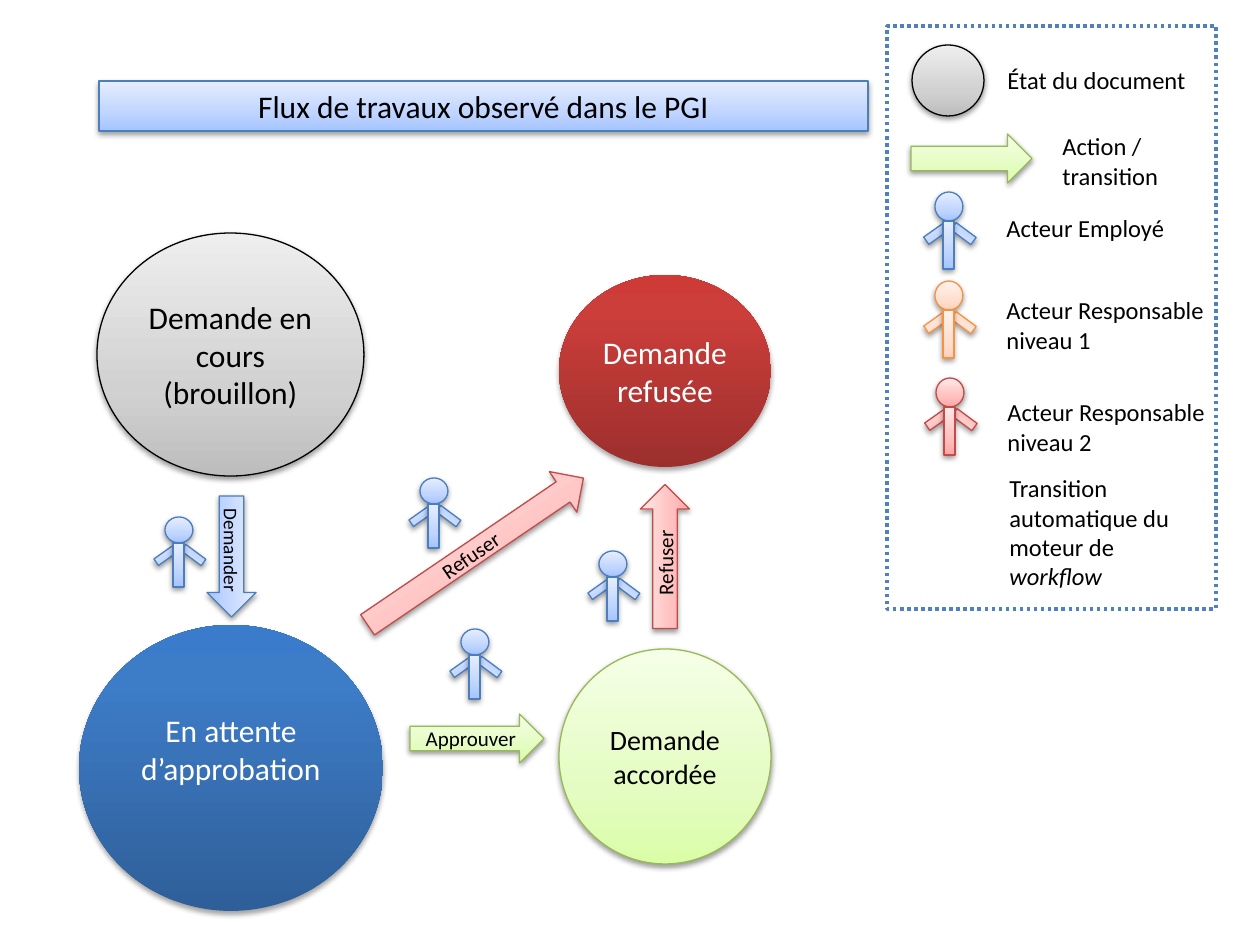
"""Build the slide showing the request approval workflow and its legend."""
from copy import deepcopy

from lxml import etree
from pptx import Presentation, util as u
from pptx.dml import color
from pptx.enum import dml, shapes, text
from pptx.oxml import ns

SCALE = 914400 / 126
KIND = shapes.MSO_SHAPE
ALIGN = text.PP_ALIGN
STOPS = (0, 0.35, 1)
DARK_STOPS = (0, 0.8, 1)
PALETTES = {
    "grey": (STOPS, ("BDBDBD", "D1D1D1", "EEEEEE"), "000000"),
    "blue": (STOPS, ("A4C4FF", "BFD4FF", "E6EEFF"), "4B7EBC"),
    "green": (STOPS, ("DAFDA7", "E4FCC2", "F5FFE7"), "98B955"),
    "red": (STOPS, ("FFA6A5", "FFC0BF", "FFE7E7"), "BF4C48"),
    "orange": (STOPS, ("FFD2BD", "FFDED0", "FFF2ED"), "F69240"),
    "dark blue": (DARK_STOPS, ("2F5F99", "3D7CC7", "3A7CCB"), None),
    "dark red": (DARK_STOPS, ("9C2F2D", "CB3E3A", "CE3B37"), None),
}
rgb = color.RGBColor.from_string


def write(box, wording, size, ink="000000", align=ALIGN.CENTER):
    frame = box.text_frame
    for index, line in enumerate(wording.split("\n")):
        para = frame.paragraphs[0] if index == 0 else frame.add_paragraph()
        para.alignment = align
        for part, piece in enumerate(line.split("_")):
            if piece:
                span = para.add_run()
                span.text = piece
                span.font.color.rgb = rgb(ink)
                style = {"name": "Calibri", "size": u.Pt(size), "italic": part % 2 == 1 or None}
                for name, value in style.items():
                    setattr(span.font, name, value)


def add_shaded(parent, kind, place, palette, turn=0):
    box = parent.shapes.add_shape(kind, *(round(v * SCALE) for v in place))
    box.rotation = turn
    positions, tints, edge = PALETTES[palette]
    box.fill.gradient()
    box.fill.gradient_angle = 90
    stop_list = box.element.spPr.find(".//" + ns.qn("a:gsLst"))
    stop_list.append(deepcopy(stop_list[-1]))
    for stop, position, tint in zip(box.fill.gradient_stops, positions, tints):
        stop.position = position
        stop.color.rgb = rgb(tint)
    if edge:
        box.line.color.rgb = rgb(edge)
        box.line.width = u.Pt(0.75)
    else:
        box.line.fill.background()
    box.shadow.inherit = False
    effects = box.element.spPr.find(ns.qn("a:effectLst"))
    shadow = etree.SubElement(
        effects, ns.qn("a:outerShdw"), blurRad=str(u.Pt(3.1)),
        dist=str(u.Pt(1.6 if edge else 1.8)), dir="5400000", rotWithShape="0")
    black = etree.SubElement(shadow, ns.qn("a:srgbClr"), val="000000")
    etree.SubElement(black, ns.qn("a:alpha"), val="38000" if edge else "35000")
    return box


deck = Presentation()
deck.slide_width, deck.slide_height = u.Inches(10), u.Inches(7.5)
page = deck.slides.add_slide(deck.slide_layouts[6])

legend = page.shapes.add_shape(KIND.RECTANGLE, *(round(v * SCALE) for v in (887, 26, 329, 583)))
legend.shadow.inherit = False
legend.fill.background()
legend.line.color.rgb = rgb("4F81BD")
legend.line.width = u.Pt(2)
legend.line.dash_style = dml.MSO_LINE.ROUND_DOT

title = add_shaded(page, KIND.RECTANGLE, (99, 81, 769, 50), "blue")
title.text_frame.word_wrap = True
write(title, "Flux de travaux observé dans le PGI", 18)

states = [
    ((97, 233, 267, 243), "grey", "Demande en cours\n(brouillon)", 18, "000000", 6),
    ((79, 625, 304, 286), "dark blue", "En attente d’approbation", 18, "FFFFFF", 44),
    ((559, 275, 212, 192), "dark red", "Demande refusée", 18, "FFFFFF", 6),
    ((559, 649, 212, 215), "green", "Demande accordée", 16, "000000", 6),
    ((912, 45, 72, 71), "grey", "", 14, "000000", 6),
]
for place, palette, wording, size, ink, bottom in states:
    state = add_shaded(page, KIND.OVAL, place, palette)
    state.text_frame.word_wrap = True
    state.text_frame.margin_bottom = round(bottom * SCALE)
    write(state, wording, size, ink)

actions = [
    ((171, 532, 121, 49), "blue", 90, "Demander", 11),
    ((410, 714, 134, 49), "green", 0, "Approuver", 12),
    ((345, 527, 261, 49), "red", 325.8, "Refuser", 12),
    ((593, 532, 144, 49), "red", 270, "Refuser", 12),
    ((911, 134, 121, 49), "green", 0, "", 12),
]
for place, palette, turn, wording, size in actions:
    action = add_shaded(page, KIND.RIGHT_ARROW, place, palette, turn)
    action.text_frame.word_wrap = True
    write(action, wording, size)

actors = [
    (165, 517, 70, "blue"),
    (420, 478, 70, "blue"),
    (461, 629, 70, "blue"),
    (599, 551, 70, "blue"),
    (935, 192, 77, "blue"),
    (935, 281, 77, "orange"),
    (936, 378, 77, "red"),
]
for left, top, height, palette in actors:
    actor = page.shapes.add_group_shape()
    head, shoulder, trunk, arm = (round(height * part) for part in (0.375, 0.48, 0.625, 0.115))
    add_shaded(actor, KIND.OVAL, (left, top, 28, head), palette)
    for offset, turn in ((-11, 324.7), (16, 216.6)):
        add_shaded(actor, KIND.RECTANGLE, (left + offset, top + shoulder, 25, arm), palette, turn)
    add_shaded(actor, KIND.RECTANGLE, (left + 8, top + head, 11, trunk), palette)

labels = [
    ((995, 59, 205, 43), "État du document", False),
    ((1050, 125, 122, 72), "Action /\ntransition", False),
    ((994, 207, 185, 47), "Acteur Employé", False),
    ((994, 289, 231, 79), "Acteur Responsable\nniveau 1", False),
    ((995, 391, 231, 79), "Acteur Responsable\nniveau 2", False),
    ((997, 467, 204, 131), "Transition automatique du moteur de _workflow_", True),
]
for place, wording, wraps in labels:
    label = page.shapes.add_textbox(*(round(v * SCALE) for v in place))
    label.text_frame.word_wrap = wraps
    label.text_frame.auto_size = text.MSO_AUTO_SIZE.SHAPE_TO_FIT_TEXT
    write(label, wording, 14, align=ALIGN.LEFT)

deck.save("out.pptx")
